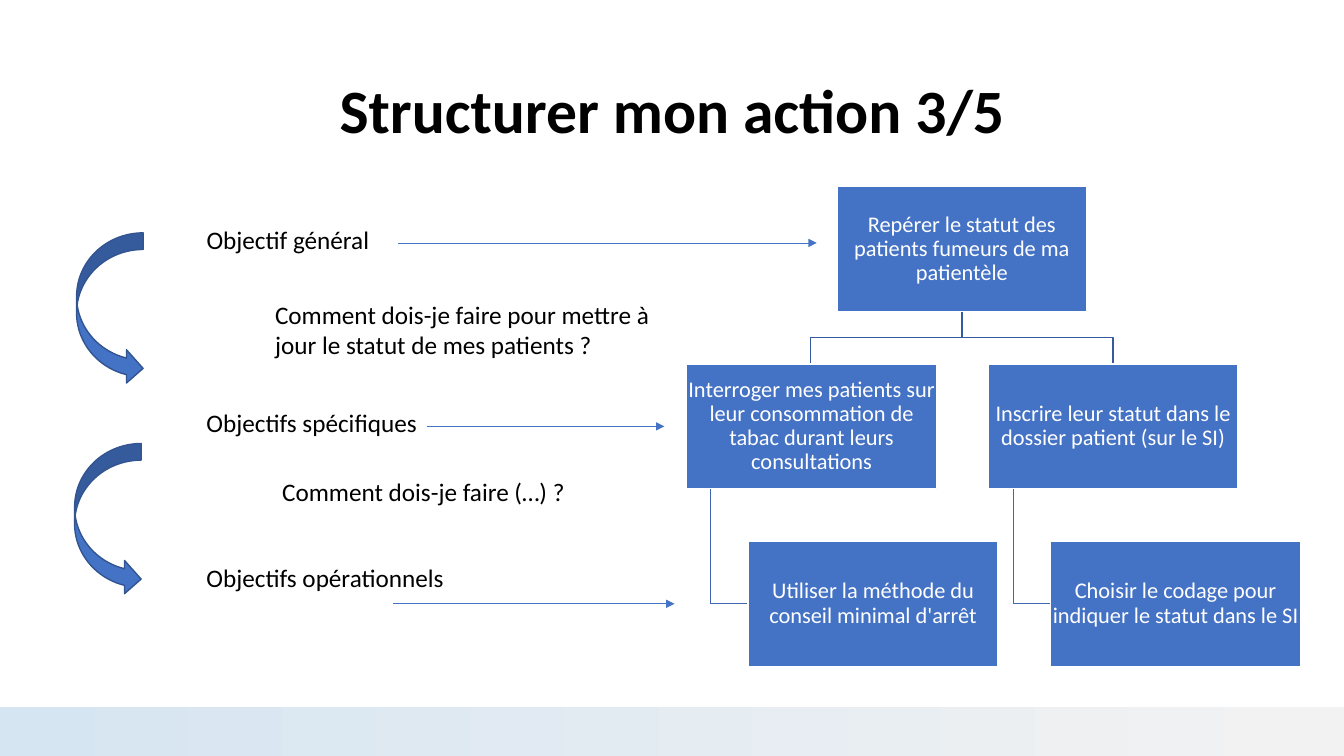
"""Build the slide that breaks an action into general, specific and operational objectives."""
from pptx import Presentation
from pptx.dml.color import RGBColor
from pptx.enum.shapes import MSO_CONNECTOR as CONNECTOR, MSO_SHAPE as SHAPE
from pptx.enum.text import MSO_ANCHOR as ANCHOR, PP_ALIGN as ALIGN
from pptx.oxml.ns import qn
from pptx.util import Pt
from lxml.etree import SubElement

PX = 9144
COLORS = {
    "black": "000000", "white": "FFFFFF", "blue": "4472C4",
    "arrow_edge": "325491", "upper_link": "365B9D", "lower_link": "3E67B2",
    "band_start": "D6E5F2", "band_end": "F2F2F2",
}
BOX_WIDTH, BOX_HEIGHT = 248, 124


def rgb(name):
    return RGBColor.from_string(COLORS[name])


def write(shape, text, size, color, align, anchor, inset=None):
    frame = shape.text_frame
    frame.word_wrap = True
    frame.vertical_anchor = anchor
    if inset is not None:
        frame.margin_left = frame.margin_right = inset * PX
        frame.margin_top = frame.margin_bottom = inset * PX
    paragraph = frame.paragraphs[0]
    paragraph.text = text
    paragraph.alignment = align
    font = paragraph.font
    font.name, font.size, font.color.rgb = "Calibri", Pt(size), rgb(color)
    return paragraph


presentation = Presentation()
presentation.slide_width, presentation.slide_height = 1333 * PX, 750 * PX
slide = presentation.slides.add_slide(presentation.slide_layouts[6])
shapes = slide.shapes

title_box = shapes.add_textbox(92 * PX, 40 * PX, 1150 * PX, 145 * PX)
title = write(title_box, "Structurer mon action 3/5", 44, "black", ALIGN.CENTER, ANCHOR.MIDDLE)
title.font.bold = True
title.line_spacing = 0.9

links = [
    ("lower_link", [(1005, 485), (1005, 599), (1042, 599)]),
    ("upper_link", [(954, 309), (954, 335), (1104, 335), (1104, 361)]),
    ("lower_link", [(705, 485), (705, 599), (742, 599)]),
    ("upper_link", [(954, 309), (954, 335), (804, 335), (804, 361)]),
]
for color, points in links:
    builder = shapes.build_freeform(*points[0], scale=PX)
    builder.add_line_segments(points[1:], close=False)
    link = builder.convert_to_shape()
    link.shadow.inherit = False
    link.fill.background()
    link.line.color.rgb = rgb(color)
    link.line.width = Pt(1)

objectives = [
    (830, 185, "Repérer le statut des patients fumeurs de ma patientèle"),
    (681, 361, "Interroger mes patients sur leur consommation de tabac durant leurs consultations"),
    (742, 537, "Utiliser la méthode du conseil minimal d'arrêt"),
    (980, 361, "Inscrire leur statut dans le dossier patient (sur le SI)"),
    (1042, 537, "Choisir le codage pour indiquer le statut dans le SI"),
]
for left, top, text in objectives:
    box = shapes.add_shape(SHAPE.RECTANGLE, left * PX, top * PX, BOX_WIDTH * PX, BOX_HEIGHT * PX)
    box.shadow.inherit = False
    box.fill.solid()
    box.fill.fore_color.rgb = rgb("blue")
    box.line.color.rgb = rgb("white")
    box.line.width = Pt(1)
    write(box, text, 16, "white", ALIGN.CENTER, ANCHOR.MIDDLE, inset=1).line_spacing = 0.9

band = shapes.add_shape(SHAPE.RECTANGLE, 0, 701 * PX, 1333 * PX, 49 * PX)
band.shadow.inherit = False
band.line.fill.background()
band.fill.gradient()
band.fill.gradient_angle = 0
for stop, position, color in zip(band.fill.gradient_stops, (0, 0.98), ("band_start", "band_end")):
    stop.position = position
    stop.color.rgb = rgb(color)

for left, top in [(76, 231), (74, 440)]:
    curved_arrow = shapes.add_shape(SHAPE.CURVED_RIGHT_ARROW, left * PX, top * PX, 66 * PX, 151 * PX)
    curved_arrow.shadow.inherit = False
    curved_arrow.fill.solid()
    curved_arrow.fill.fore_color.rgb = rgb("blue")
    curved_arrow.line.color.rgb = rgb("arrow_edge")
    curved_arrow.line.width = Pt(1)

labels = [
    (195, 218, 229, 40, "Objectif général"),
    (195, 399, 256, 40, "Objectifs spécifiques"),
    (263, 292, 397, 71, "Comment dois-je faire pour mettre à jour le statut de mes patients ?"),
    (270, 468, 397, 40, "Comment dois-je faire (…) ?"),
    (195, 553, 256, 71, "Objectifs opérationnels"),
]
for left, top, width, height, text in labels:
    label = shapes.add_textbox(left * PX, top * PX, width * PX, height * PX)
    write(label, text, 18, "black", ALIGN.LEFT, ANCHOR.TOP)

for start, end, y in [(395, 810, 241), (424, 659, 423), (390, 669, 599)]:
    arrow = shapes.add_connector(CONNECTOR.STRAIGHT, start * PX, y * PX, end * PX, y * PX)
    arrow.line.color.rgb = rgb("blue")
    arrow.line.width = Pt(0.5)
    properties = arrow.element.spPr
    SubElement(properties.find(qn("a:ln")), qn("a:tailEnd"), type="triangle")
    SubElement(properties, qn("a:effectLst"))

presentation.save("out.pptx")
